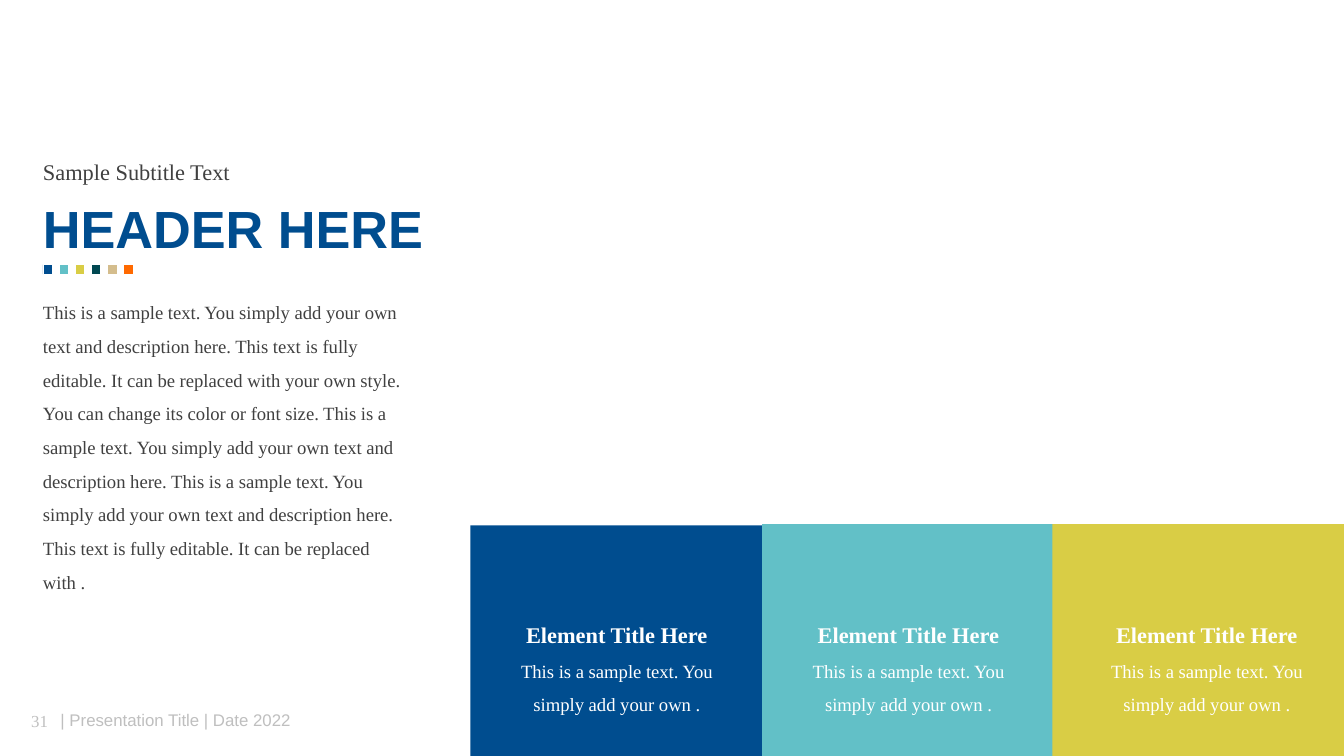
from dataclasses import dataclass

import pptx
import pptx.dml.color
import pptx.enum.shapes
import pptx.enum.text
import pptx.util

Inches = pptx.util.Inches
Pt = pptx.util.Pt
RGBColor = pptx.dml.color.RGBColor
Align = pptx.enum.text.PP_ALIGN

WHITE = RGBColor(0xFF, 0xFF, 0xFF)
BLUE = RGBColor(0x00, 0x4D, 0x8F)
TEAL = RGBColor(0x62, 0xC0, 0xC7)
YELLOW = RGBColor(0xD9, 0xCD, 0x45)
DARK_TEAL = RGBColor(0x00, 0x48, 0x51)
SAND = RGBColor(0xD4, 0xBD, 0x8D)
ORANGE = RGBColor(0xFF, 0x69, 0x00)
DARK_GREY = RGBColor(0x40, 0x40, 0x40)
LIGHT_GREY = RGBColor(0xBF, 0xBF, 0xBF)

SERIF = "Times New Roman"
SANS = "Arial"
SWATCHES = (BLUE, TEAL, YELLOW, DARK_TEAL, SAND, ORANGE)
BODY = (
    "This is a sample text. You simply add your own text and description here. "
    "This text is fully editable. It can be replaced with your own style. "
    "You can change its color or font size. This is a sample text. "
    "You simply add your own text and description here. This is a sample text. "
    "You simply add your own text and description here. "
    "This text is fully editable. It can be replaced with ."
)


@dataclass(frozen=True)
class Box:
    left: float
    top: float
    width: float
    height: float

    def lengths(self) -> list[pptx.util.Length]:
        return [Inches(v) for v in (self.left, self.top, self.width, self.height)]


@dataclass(frozen=True)
class Style:
    size: float
    color: RGBColor
    font: str = SERIF
    bold: bool = False


@dataclass(frozen=True)
class Element:
    color: RGBColor
    panel: Box
    text_left: float


ELEMENTS = (
    Element(BLUE, Box(3.5, 3.91, 2.17, 1.73), 3.74),
    Element(TEAL, Box(5.67, 3.9, 2.17, 1.73), 5.91),
    Element(YELLOW, Box(7.83, 3.9, 2.17, 1.73), 8.13),
)


def add_rectangle(slide, box: Box, color: RGBColor, outlined: bool = False) -> None:
    rectangle = slide.shapes.add_shape(
        pptx.enum.shapes.MSO_SHAPE.RECTANGLE, *box.lengths()
    )
    rectangle.shadow.inherit = False
    rectangle.fill.solid()
    rectangle.fill.fore_color.rgb = color
    if outlined:
        rectangle.line.color.rgb = WHITE
        rectangle.line.width = Pt(0.25)
    else:
        rectangle.line.fill.background()


def add_text(slide, box: Box, lines: list[tuple[str, Style]], **paragraph_format) -> None:
    """Add one paragraph whose lines are parted by line breaks."""
    frame = slide.shapes.add_textbox(*box.lengths()).text_frame
    frame_format = {
        "word_wrap": True,
        "vertical_anchor": pptx.enum.text.MSO_ANCHOR.MIDDLE,
        "margin_left": 0,
        "margin_top": 0,
        "margin_right": 0,
        "margin_bottom": 0,
    }
    for name, value in frame_format.items():
        setattr(frame, name, value)
    paragraph = frame.paragraphs[0]
    for name, value in paragraph_format.items():
        setattr(paragraph, name, value)
    for index, (text, style) in enumerate(lines):
        if index:
            paragraph.add_line_break()
        run = paragraph.add_run()
        run.text = text
        font_format = {"name": style.font, "size": Pt(style.size), "bold": style.bold}
        for name, value in font_format.items():
            setattr(run.font, name, value)
        run.font.color.rgb = style.color


def add_element(slide, element: Element) -> None:
    lines = [
        ("Element Title Here", Style(12, WHITE, bold=True)),
        ("This is a sample text. You simply add your own .", Style(10, WHITE)),
    ]
    add_rectangle(slide, element.panel, element.color)
    add_text(slide, Box(element.text_left, 4.52, 1.7, 0.81), lines,
             alignment=Align.CENTER, line_spacing=1.5, space_after=Pt(10))


def main() -> None:
    deck = pptx.Presentation()
    deck.slide_width = Inches(10)
    deck.slide_height = Inches(10 * 9 / 16)
    slide = deck.slides.add_slide(deck.slide_layouts[6])

    add_text(slide, Box(0.08, 5.21, 0.43, 0.3), [("31", Style(9, LIGHT_GREY))],
             alignment=Align.CENTER)
    add_text(slide, Box(0.45, 5.28, 2, 0.15),
             [("| Presentation Title | Date 2022", Style(9, LIGHT_GREY, SANS))])

    add_text(slide, Box(0.32, 1.18, 2.77, 0.2),
             [("Sample Subtitle Text", Style(12, DARK_GREY))])
    add_text(slide, Box(0.32, 1.44, 2.93, 0.48),
             [("HEADER HERE", Style(28, BLUE, SANS, bold=True))],
             line_spacing=1.07, space_after=Pt(6))
    for index, color in enumerate(SWATCHES):
        add_rectangle(slide, Box(0.32 + 0.12 * index, 1.97, 0.07, 0.07), color,
                      outlined=True)
    add_text(slide, Box(0.32, 2.15, 2.77, 2.27), [(BODY, Style(10, DARK_GREY))],
             line_spacing=1.5)

    for element in ELEMENTS:
        add_element(slide, element)

    deck.save("out.pptx")


if __name__ == "__main__":
    main()
